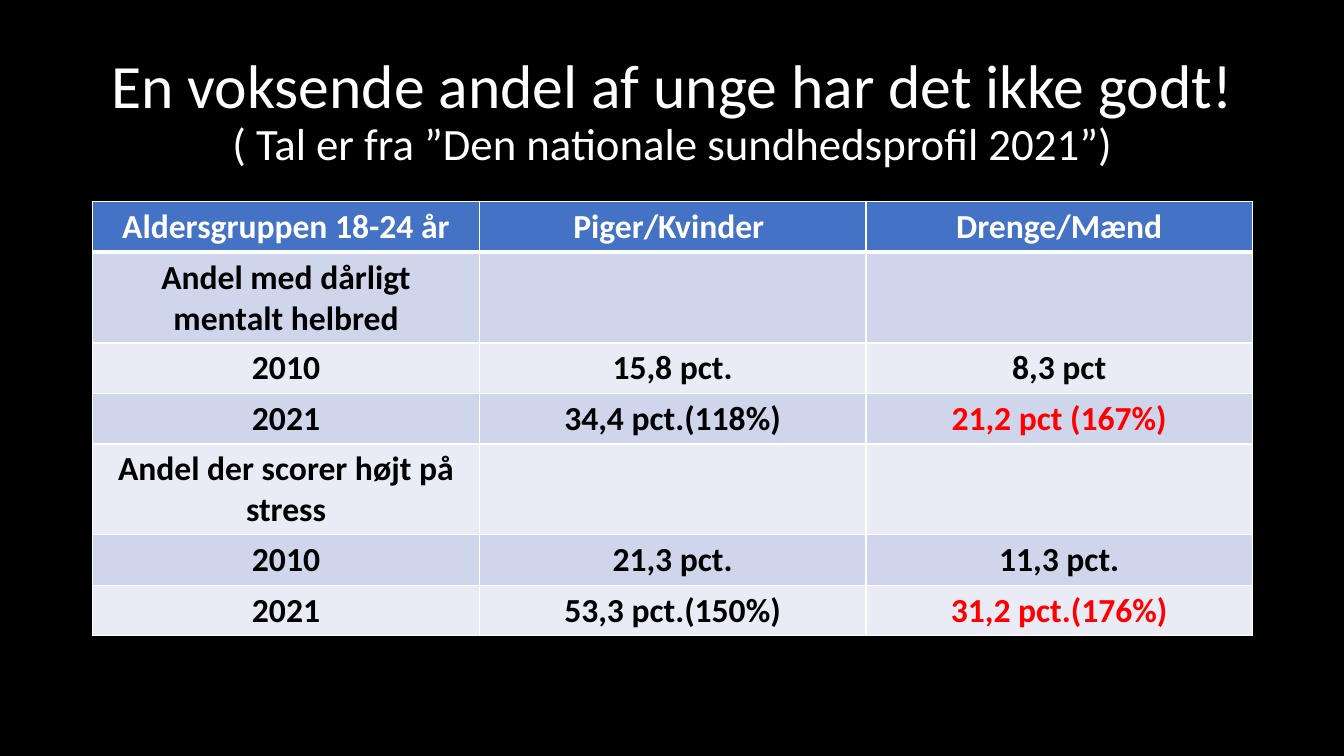
"""Build a slide with a table on the mental health of young people."""
from dataclasses import dataclass

from lxml.etree import SubElement
from pptx import Presentation
from pptx.dml.color import RGBColor
from pptx.enum.text import MSO_ANCHOR, PP_ALIGN
from pptx.oxml.ns import qn
from pptx.slide import Slide
from pptx.table import _Cell
from pptx.text.text import _Run
from pptx.util import Inches, Pt

WIDTH, HEIGHT = Inches(13.33), Inches(7.5)


@dataclass(frozen=True)
class Theme:
    font: str = "Calibri"
    back: str = "000000"
    light: str = "FFFFFF"
    dark: str = "000000"
    alert: str = "FF0000"
    head: str = "4472C4"
    bands: tuple[str, str] = ("E9EBF5", "CFD5EA")
    title: int = 44
    source: int = 32
    body: int = 24
    thin: int = 1
    thick: int = 3


@dataclass(frozen=True)
class Box:
    left: float
    top: float
    width: float
    height: float

    def place(self) -> tuple[int, int, int, int]:
        return (int(self.left * WIDTH), int(self.top * HEIGHT),
                int(self.width * WIDTH), int(self.height * HEIGHT))


@dataclass(frozen=True)
class Row:
    texts: tuple[str, str, str]
    units: int = 5
    alert: bool = False


THEME = Theme()
TITLE = Box(0.069, 0.053, 0.863, 0.193)
TABLE = Box(0.069, 0.267, 0.863, 0.573)
LINES = ("En voksende andel af unge har det ikke godt!",
         "( Tal er fra ”Den nationale sundhedsprofil 2021”)")
ROWS = (
    Row(("Aldersgruppen 18-24 år", "Piger/Kvinder ", "Drenge/Mænd")),
    Row(("Andel med dårligt mentalt helbred", "", ""), units=9),
    Row(("2010", "15,8 pct.", "8,3 pct")),
    Row(("2021", "34,4 pct.(118%)", "21,2 pct (167%)"), alert=True),
    Row(("Andel der scorer højt på stress", "", ""), units=9),
    Row(("2010", "21,3 pct.", "11,3 pct.")),
    Row(("2021", "53,3 pct.(150%)", "31,2 pct.(176%)"), alert=True),
)


def style(run: _Run, size: int, color: str, bold: bool = False) -> None:
    """Format one run."""
    run.font.name = THEME.font
    run.font.size = Pt(size)
    run.font.bold = bold
    run.font.color.rgb = RGBColor.from_string(color)


def border(cell: _Cell, head: bool) -> None:
    """Draw the four edges of a cell."""
    props = cell._tc.get_or_add_tcPr()
    for side in "LRTB":
        width = THEME.thick if head and side == "B" else THEME.thin
        line = SubElement(props, qn(f"a:ln{side}"), w=str(Pt(width)))
        fill = SubElement(line, qn("a:solidFill"))
        SubElement(fill, qn("a:srgbClr"), val=THEME.light)


def add_title(slide: Slide) -> None:
    """Add the two-line heading."""
    frame = slide.shapes.add_textbox(*TITLE.place()).text_frame
    frame.word_wrap = True
    frame.vertical_anchor = MSO_ANCHOR.MIDDLE
    para = frame.paragraphs[0]
    para.text = "\v".join(LINES)
    para.alignment = PP_ALIGN.CENTER
    para.line_spacing = 0.9
    for run, size in zip(para.runs, (THEME.title, THEME.source)):
        style(run, size, THEME.light)


def fill_cell(cell: _Cell, text: str, fill: str, color: str, head: bool) -> None:
    """Write and paint one cell."""
    border(cell, head)
    cell.fill.solid()
    cell.fill.fore_color.rgb = RGBColor.from_string(fill)
    para = cell.text_frame.paragraphs[0]
    para.text = text
    para.alignment = PP_ALIGN.CENTER
    for run in para.runs:
        style(run, THEME.body, color, bold=True)


def add_grid(slide: Slide) -> None:
    """Add the table of shares by year and sex."""
    count = len(ROWS[0].texts)
    table = slide.shapes.add_table(len(ROWS), count, *TABLE.place()).table
    unit = TABLE.height * HEIGHT / sum(row.units for row in ROWS)
    for i, row in enumerate(ROWS):
        table.rows[i].height = int(row.units * unit)
        head = i == 0
        fill = THEME.head if head else THEME.bands[i % 2]
        for j, text in enumerate(row.texts):
            color = THEME.light if head else THEME.dark
            if row.alert and j == count - 1:
                color = THEME.alert
            fill_cell(table.cell(i, j), text, fill, color, head)


def main() -> None:
    """Build and save the deck."""
    deck = Presentation()
    deck.slide_width, deck.slide_height = WIDTH, HEIGHT
    slide = deck.slides.add_slide(deck.slide_layouts[6])
    slide.background.fill.solid()
    slide.background.fill.fore_color.rgb = RGBColor.from_string(THEME.back)
    add_title(slide)
    add_grid(slide)
    deck.save("out.pptx")


if __name__ == "__main__":
    main()
